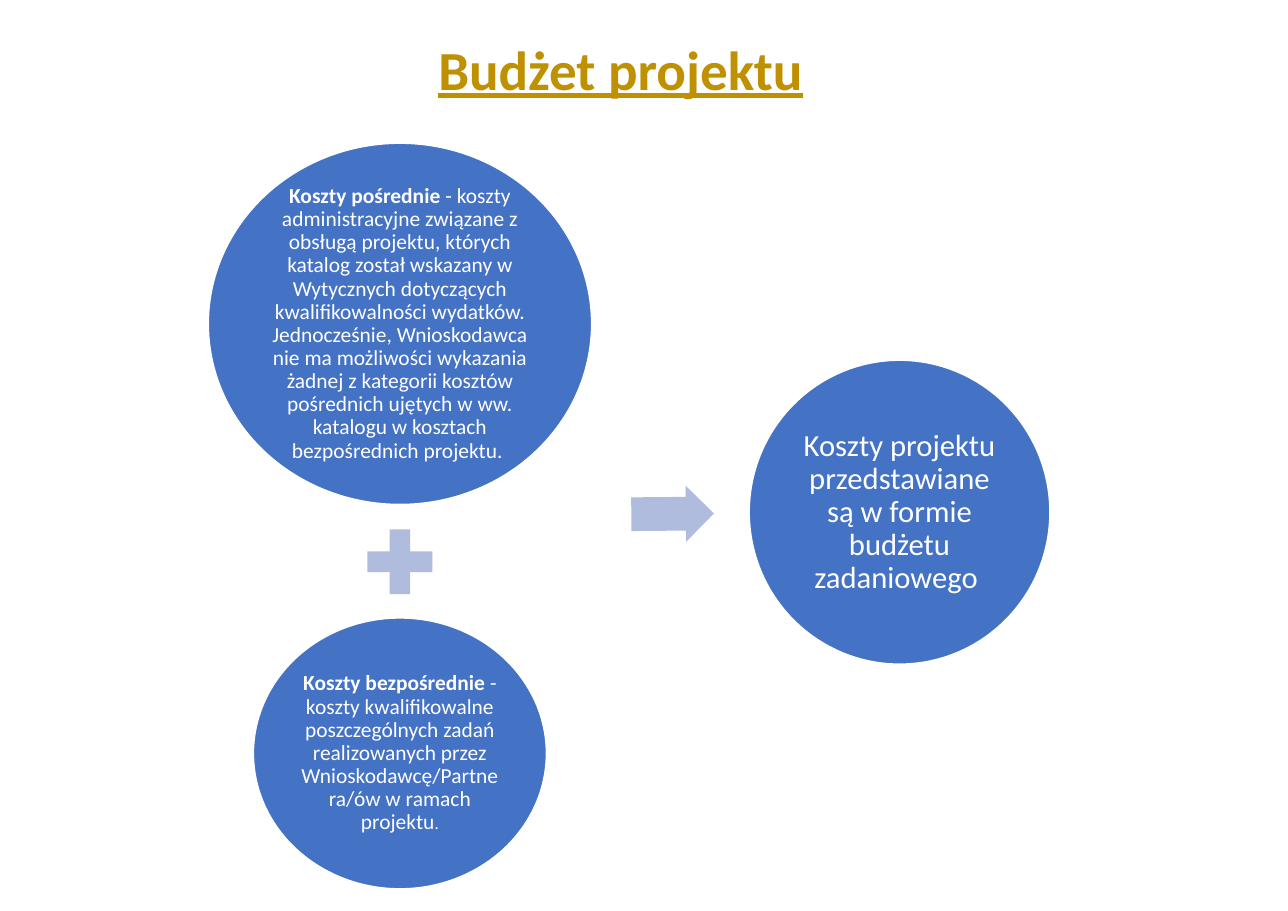
from pptx import Presentation
from pptx import util as u
from pptx.dml.color import RGBColor
from pptx.enum import shapes, text

WHITE = RGBColor(0xFF, 0xFF, 0xFF)
BLUE = RGBColor(0x44, 0x72, 0xC4)
PALE_BLUE = RGBColor(0xB0, 0xBC, 0xDE)
GOLD = RGBColor(0xBF, 0x90, 0x00)
SHAPE = shapes.MSO_SHAPE

INDIRECT_COSTS = (
    "- koszty administracyjne związane z obsługą projektu, których katalog "
    "został wskazany w Wytycznych dotyczących kwalifikowalności wydatków. "
    "Jednocześnie, Wnioskodawca nie ma możliwości wykazania żadnej z kategorii "
    "kosztów pośrednich ujętych w ww. katalogu w kosztach bezpośrednich projektu. "
)
DIRECT_COSTS = (
    "- koszty kwalifikowalne poszczególnych zadań realizowanych przez "
    "Wnioskodawcę/Partnera/ów w ramach projektu"
)
TASK_BUDGET = "Koszty projektu przedstawiane są w formie budżetu zadaniowego "


def add_run(paragraph, content, size=14, color=WHITE, bold=False, underline=False):
    run = paragraph.add_run()
    run.text = content
    font = run.font
    font.name = "Calibri"
    font.size = u.Pt(size)
    font.color.rgb = color
    font.bold = bold
    font.underline = underline


class BudgetSlide:
    def __init__(self, slide):
        self.slide = slide

    def title(self, content, left, top, width, height):
        box = self.slide.shapes.add_textbox(*map(u.Inches, (left, top, width, height)))
        box.text_frame.word_wrap = True
        add_run(box.text_frame.paragraphs[0], content, size=36, color=GOLD,
                bold=True, underline=True)

    def symbol(self, kind, left, top, width, height, fill=PALE_BLUE):
        shape = self.slide.shapes.add_shape(
            kind, *map(u.Inches, (left, top, width, height)))
        shape.shadow.inherit = False
        shape.fill.solid()
        shape.fill.fore_color.rgb = fill
        shape.line.fill.background()
        return shape

    def circle(self, left, top, width, height, runs, margin=0.02):
        """Add a blue oval whose text is a list of (content, format) pairs."""
        shape = self.symbol(SHAPE.OVAL, left, top, width, height, fill=BLUE)
        shape.line.color.rgb = WHITE
        shape.line.width = u.Pt(1)
        frame = shape.text_frame
        frame.word_wrap = True
        frame.vertical_anchor = text.MSO_ANCHOR.MIDDLE
        frame.margin_left = frame.margin_right = u.Inches(margin)
        frame.margin_top = frame.margin_bottom = u.Inches(margin)
        paragraph = frame.paragraphs[0]
        paragraph.alignment = text.PP_ALIGN.CENTER
        paragraph.line_spacing = 0.9
        for content, style in runs:
            add_run(paragraph, content, **style)


def main():
    presentation = Presentation()
    presentation.slide_width = u.Inches(11.69)
    presentation.slide_height = u.Inches(8.27)
    budget = BudgetSlide(presentation.slides.add_slide(presentation.slide_layouts[6]))

    budget.title("Budżet projektu", 3.88, 0.27, 5.51, 0.71)
    budget.circle(1.89, 1.3, 3.48, 3.28, [
        ("Koszty pośrednie ", {"bold": True}),
        (INDIRECT_COSTS, {}),
    ])
    budget.symbol(SHAPE.MATH_PLUS, 3.23, 4.7, 0.8, 0.8)
    budget.circle(2.3, 5.61, 2.66, 2.46, [
        ("Koszty bezpośrednie ", {"bold": True}),
        (DIRECT_COSTS, {}),
        (".", {"size": 11}),
    ])
    arrow = budget.symbol(SHAPE.RIGHT_ARROW, 5.73, 4.41, 0.75, 0.51)
    arrow.adjustments[0] = 0.6
    arrow.rotation = 359.5
    budget.circle(6.8, 3.27, 2.73, 2.76, [(TASK_BUDGET, {"size": 20})], margin=0.03)

    presentation.save("out.pptx")


if __name__ == "__main__":
    main()
